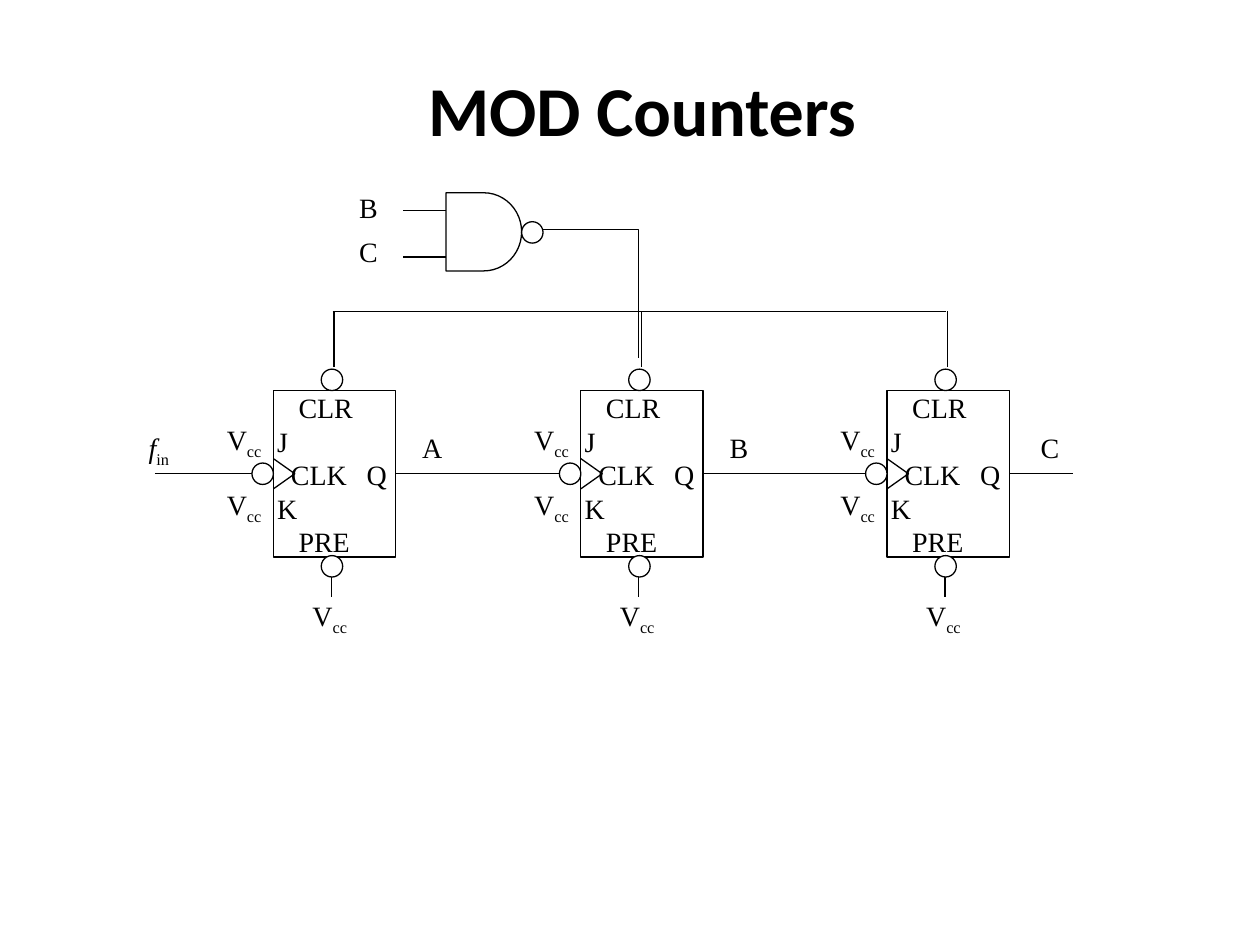
from dataclasses import dataclass

from lxml import etree
from pptx import Presentation
from pptx.dml.color import RGBColor
from pptx.enum.shapes import MSO_CONNECTOR, MSO_SHAPE
from pptx.enum.text import MSO_ANCHOR, MSO_AUTO_SIZE, PP_ALIGN
from pptx.oxml.ns import qn
from pptx.util import Inches, Pt

STRAIGHT = MSO_CONNECTOR.STRAIGHT
RECT, OVAL, GATE = MSO_SHAPE.RECTANGLE, MSO_SHAPE.OVAL, MSO_SHAPE.FLOWCHART_DELAY
TOP = MSO_ANCHOR.TOP
LEFT, CENTER = PP_ALIGN.LEFT, PP_ALIGN.CENTER
GROW = MSO_AUTO_SIZE.SHAPE_TO_FIT_TEXT
RIGHT_SIDE = 3


@dataclass(frozen=True)
class Theme:
    ink: RGBColor = RGBColor(0, 0, 0)
    paper: RGBColor = RGBColor(255, 255, 255)
    line: Pt = Pt(0.75)
    title: Pt = Pt(40)
    body: Pt = Pt(16)
    head_font: str = "Calibri"
    body_font: str = "Times New Roman"


THEME = Theme()
BODY = {"name": THEME.body_font, "size": THEME.body}
HEAD = {"name": THEME.head_font, "size": THEME.title, "bold": True}

BOX_TOP, BOX_W, BOX_H = 3.1, 0.97, 1.32
MID = BOX_TOP + BOX_H / 2
DOT = 0.17
BUS = 2.47
STAGES = ((2.17, "A", 3.34, 4.45), (4.61, "B", 5.78, 6.88), (7.04, "C", 8.25, 8.52))
PINS = (("\tCLR", (0.17,)), ("J", ()), ("\tCLK\tQ", (0.11, 0.71)),
        ("K", ()), ("\tPRE", (0.17,)))


def apply(target, values):
    for key, value in values.items():
        setattr(target, key, value)


def add_run(para, text, fmt, sub=False):
    run = para.add_run()
    run.text = text
    apply(run.font, fmt)
    run.font.color.rgb = THEME.ink
    if sub:
        run.font._element.set("baseline", "-25000")


def set_frame(frame, side, edge):
    apply(frame, {"word_wrap": True, "vertical_anchor": TOP,
                  "margin_left": Inches(side), "margin_right": Inches(side),
                  "margin_top": Inches(edge), "margin_bottom": Inches(edge)})


def set_tabs(para, stops):
    tabs = etree.SubElement(para._p.get_or_add_pPr(), qn("a:tabLst"))
    for stop in stops:
        etree.SubElement(tabs, qn("a:tab"), pos=str(Inches(stop)), algn="l")


def add_title(slide, text):
    box = slide.shapes.add_textbox(Inches(1.39), Inches(0.48), Inches(7.41), Inches(0.77))
    frame = box.text_frame
    apply(frame, {"word_wrap": True, "auto_size": GROW})
    frame.paragraphs[0].alignment = CENTER
    add_run(frame.paragraphs[0], text, HEAD)


def add_label(slide, x, y, text, sub="", italic=False):
    box = slide.shapes.add_textbox(Inches(x), Inches(y), Inches(0.41), Inches(0.35))
    set_frame(box.text_frame, 0.01, 0.01)
    para = box.text_frame.paragraphs[0]
    add_run(para, text, {**BODY, "italic": italic})
    if sub:
        add_run(para, sub, BODY, True)


def add_line(slide, x1, y1, x2, y2):
    wire = slide.shapes.add_connector(STRAIGHT, Inches(x1), Inches(y1), Inches(x2), Inches(y2))
    wire.line.color.rgb = THEME.ink
    wire.line.width = THEME.line
    etree.SubElement(wire._element.spPr, qn("a:effectLst"))
    return wire


def set_edge(shape):
    shape.shadow.inherit = False
    shape.line.color.rgb = THEME.ink
    shape.line.width = THEME.line


def add_path(slide, *points):
    spots = [(Inches(x), Inches(y)) for x, y in points]
    build = slide.shapes.build_freeform(*spots[0], scale=1.0)
    build.add_line_segments(spots[1:], close=False)
    path = build.convert_to_shape()
    path.fill.background()
    set_edge(path)


def add_block(slide, kind, x, y, w, h):
    shape = slide.shapes.add_shape(kind, Inches(x), Inches(y), Inches(w), Inches(h))
    shape.fill.solid()
    shape.fill.fore_color.rgb = THEME.paper
    set_edge(shape)
    return shape


def add_dot(slide, x, y):
    add_block(slide, OVAL, x, y, DOT, DOT)


def add_gate(slide):
    add_path(slide, (3.2, 1.67), (3.8, 1.67), (3.8, 2.04), (3.2, 2.04))
    add_path(slide, (3.82, 1.82), (5.07, 1.82), (5.07, 2.84))
    add_block(slide, GATE, 3.54, 1.53, 0.6, 0.62)
    add_dot(slide, 4.14, 1.76)
    add_label(slide, 2.84, 1.5, "B")
    add_label(slide, 2.84, 1.85, "C")
    add_line(slide, 2.64, BUS, 7.51, BUS)


def add_flop(slide, x):
    add_line(slide, x + 0.48, 2.91, x + 0.48, BUS)
    add_line(slide, x + 0.46, 4.43, x + 0.46, 4.74)
    box = add_block(slide, RECT, x, BOX_TOP, BOX_W, BOX_H)
    frame = box.text_frame
    set_frame(frame, 0.03, 0)
    for row, (text, stops) in enumerate(PINS):
        para = frame.add_paragraph() if row else frame.paragraphs[0]
        para.alignment = LEFT
        add_run(para, text, BODY)
        if stops:
            set_tabs(para, stops)
    add_path(slide, (x, MID - 0.12), (x + 0.17, MID), (x, MID + 0.12))
    add_dot(slide, x - DOT, MID - DOT / 2)
    for y in (2.93, 4.41):
        add_dot(slide, x + 0.38, y)
    for dx, y in ((-0.38, 3.34), (-0.38, 3.86), (0.3, 4.74)):
        add_label(slide, x + dx, y, "V", "cc")
    return box


def main():
    deck = Presentation()
    deck.slide_width, deck.slide_height = Inches(10), Inches(7.5)
    slide = deck.slides.add_slide(deck.slide_layouts[6])
    add_title(slide, "MOD Counters")
    add_gate(slide)
    add_line(slide, 1.23, MID, 2, MID)
    add_label(slide, 1.17, 3.41, "f", "in", True)
    for x, name, spot, end in STAGES:
        box = add_flop(slide, x)
        wire = add_line(slide, x + BOX_W, MID, end, MID)
        wire.begin_connect(box, RIGHT_SIDE)
        add_label(slide, spot, 3.41, name)
    deck.save("out.pptx")


if __name__ == "__main__":
    main()
